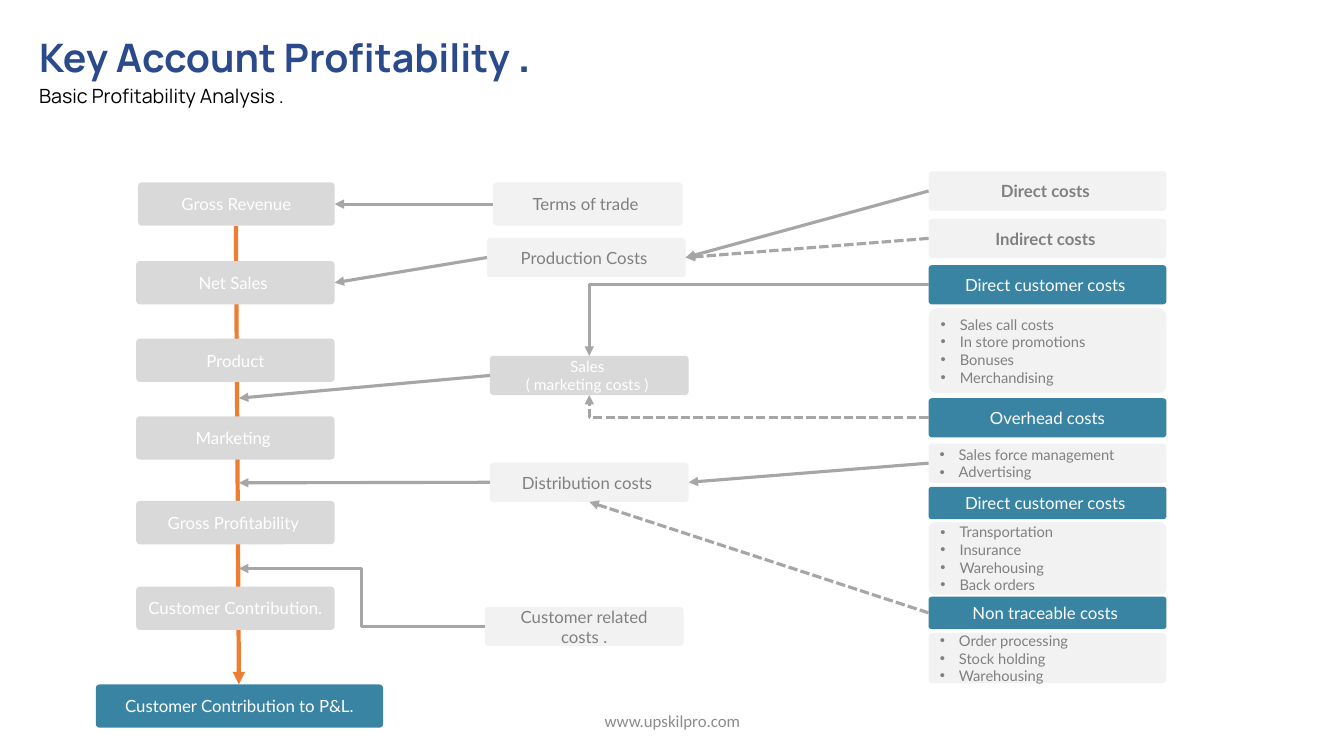
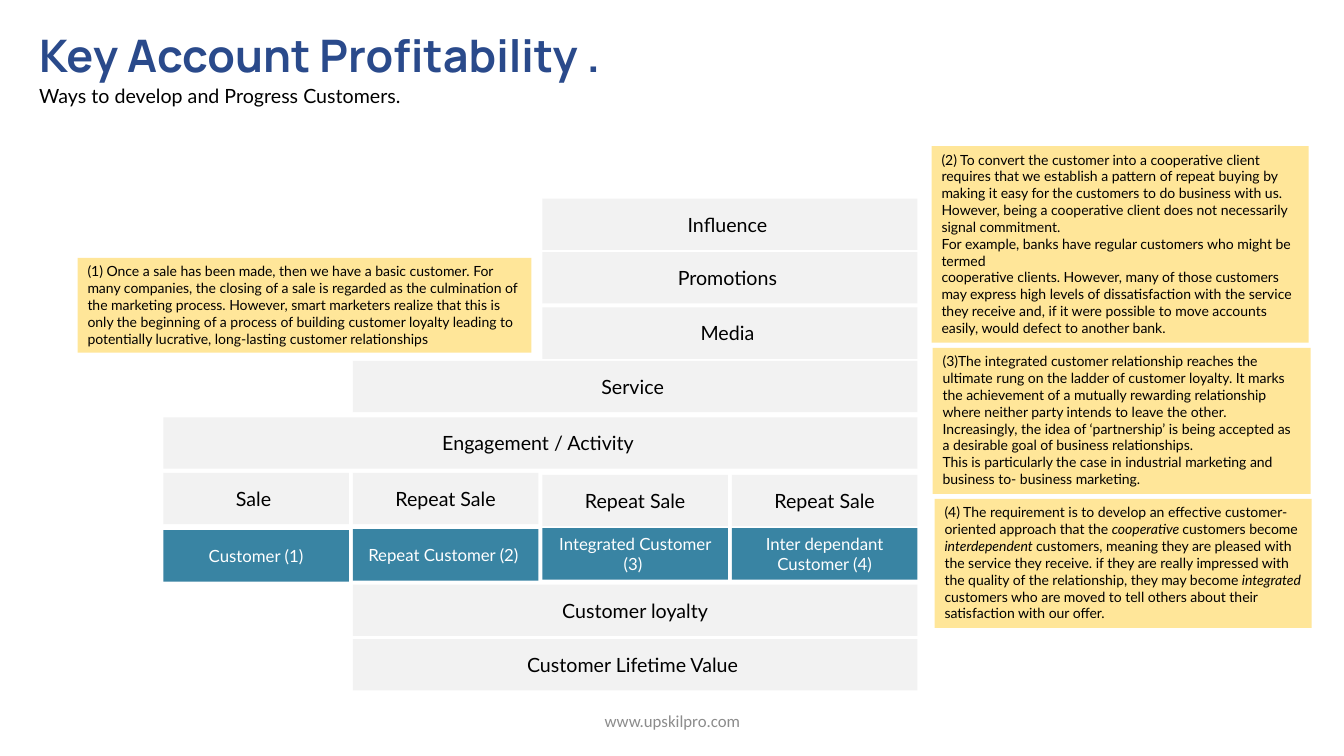
"""Build two slides on key account profitability: a cost flow and a customer ladder."""
from pptx import Presentation, util as u
from pptx.dml.color import RGBColor
from pptx.enum import dml, shapes, text
from pptx.oxml.ns import qn
from lxml import etree

PX = 9144
NAVY = RGBColor(0x2A, 0x4A, 0x8B)
TEAL = RGBColor(0x39, 0x84, 0xA3)
ORANGE = RGBColor(0xED, 0x7D, 0x31)
YELLOW = RGBColor(0xFF, 0xE6, 0x99)
SILVER = RGBColor(0xD9, 0xD9, 0xD9)
PALE = RGBColor(0xF2, 0xF2, 0xF2)
LINE_GRAY = RGBColor(0xA6, 0xA6, 0xA6)
TEXT_GRAY = RGBColor(0x80, 0x80, 0x80)
FOOTER_GRAY = RGBColor(0x8C, 0x8C, 0x8C)
WHITE = RGBColor(0xFF, 0xFF, 0xFF)
BLACK = RGBColor(0, 0, 0)
BODY_FONT, TITLE_FONT, FOOTER_FONT = "Lato", "Manrope", "Calibri"
LEFT, CENTER = text.PP_ALIGN.LEFT, text.PP_ALIGN.CENTER
TOP, MIDDLE = text.MSO_ANCHOR.TOP, text.MSO_ANCHOR.MIDDLE
TITLE = "Key Account Profitability "
FOOTER = "www.upskilpro.com"

STYLES = {
    "stage": dict(fill=SILVER, color=WHITE, size=12),
    "sales": dict(fill=SILVER, color=WHITE, size=11),
    "cost": dict(fill=PALE, color=TEXT_GRAY, size=12),
    "group": dict(fill=PALE, color=TEXT_GRAY, size=12, bold=True),
    "head": dict(fill=TEAL, color=WHITE, size=12),
    "list": dict(fill=PALE, color=TEXT_GRAY, size=10.5, align=LEFT, bullets=True),
    "step": dict(fill=PALE, color=BLACK, size=14),
    "note": dict(fill=YELLOW, color=BLACK, size=10, align=LEFT, anchor=TOP),
}

FLOW_BOXES = {
    "revenue": ("stage", (137, 181, 195, 43), ["Gross Revenue"]),
    "net": ("stage", (135, 259, 197, 43), ["Net Sales "]),
    "product": ("stage", (135, 336, 197, 43), ["Product"]),
    "marketing": ("stage", (135, 413, 197, 43), ["Marketing "]),
    "gross": ("stage", (135, 497, 197, 43), ["Gross Profitability "]),
    "contribution": ("stage", (135, 582, 197, 43), ["Customer Contribution."]),
    "result": ("head", (95, 679, 285, 43), ["Customer Contribution to P&L."]),
    "terms": ("cost", (489, 181, 188, 43), ["Terms of trade "]),
    "production": ("cost", (483, 236, 197, 39), ["Production Costs "]),
    "sales": ("sales", (486, 353, 197, 39), ["Sales ", "( marketing costs ) "]),
    "distribution": ("cost", (486, 459, 197, 39), ["Distribution costs "]),
    "related": ("cost", (481, 602, 197, 39), ["Customer related costs ."]),
}
COST_X, COST_WIDTH = 921, 236
COST_COLUMN = [
    ("direct", "group", 170, 39, ["Direct costs "]),
    ("indirect", "group", 217, 39, ["Indirect costs "]),
    ("customer", "head", 263, 39, ["Direct customer costs "]),
    ("promotion", "list", 306, 84,
     ["Sales call costs", "In store promotions", "Bonuses", "Merchandising"]),
    ("overhead", "head", 395, 39, ["Overhead costs"]),
    ("force", "list", 440, 39, ["Sales force management", "Advertising"]),
    ("delivery", "head", 483, 32, ["Direct customer costs "]),
    ("transport", "list", 518, 72,
     ["Transportation", "Insurance", "Warehousing", "Back orders"]),
    ("untraceable", "head", 592, 32, ["Non traceable costs "]),
    ("orders", "list", 628, 50, ["Order processing", "Stock holding", "Warehousing"]),
]
SPINE_TOP, SPINE_END = (234, 224), (237, 679)
LINKS = [
    ("terms", "revenue", "right", "line", False),
    ("production", "net", "right", "line", False),
    ("sales", "spine", 395, "line", False),
    ("distribution", "spine", 479, "line", False),
    ("related", "spine", 564, "bentConnector3", False),
    ("direct", "production", "right", "line", False),
    ("indirect", "production", "right", "line", True),
    ("customer", "sales", "top", "bentConnector2", False),
    ("overhead", "sales", "bottom", "bentConnector2", True),
    ("force", "distribution", "right", "line", False),
    ("untraceable", "distribution", "bottom", "line", True),
]

GRID_X, CELL_WIDTH, CELL_PITCH, CELL_HEIGHT = 162, 184, 188, 51
LADDER = [
    (197, 2, 3, "step", "Influence "),
    (250, 2, 3, "step", "Promotions "),
    (305, 2, 3, "step", "Media "),
    (358, 1, 3, "step", "Service "),
    (414, 0, 3, "step", "Engagement / Activity "),
    (469, 0, 0, "step", "Sale "),
    (469, 1, 1, "step", "Repeat Sale"),
    (471, 2, 2, "step", "Repeat Sale"),
    (471, 3, 3, "step", "Repeat Sale"),
    (526, 0, 0, "head", "Customer (1)"),
    (525, 1, 1, "head", "Repeat Customer (2) "),
    (524, 2, 2, "head", "Integrated Customer (3) "),
    (524, 3, 3, "head", "Inter dependant Customer (4)"),
    (580, 1, 3, "step", "Customer loyalty"),
    (634, 1, 3, "step", "Customer Lifetime Value "),
]
NOTES = [
    ((77, 256, 450, 94), [
        "(1) Once a sale has been made, then we have a basic customer. For many companies, "
        "the closing of a sale is regarded as the culmination of the marketing process. "
        "However, smart marketers realize that this is only the beginning of a process of "
        "building customer loyalty leading to potentially lucrative, long-lasting customer "
        "relationships"]),
    ((924, 145, 374, 195), [
        "(2) To convert the customer into a cooperative client requires that we establish a "
        "pattern of repeat buying by making it easy for the customers to do business with us. "
        "However, being a cooperative client does not necessarily signal commitment.",
        "For example, banks have regular customers who might be termed",
        "cooperative clients. However, many of those customers may express high levels of "
        "dissatisfaction with the service they receive and, if it were possible to move "
        "accounts easily, would defect to another bank."]),
    ((925, 345, 375, 145), [
        "(3)The integrated customer relationship reaches the ultimate rung on the ladder of "
        "customer loyalty. It marks the achievement of a mutually rewarding relationship",
        "where neither party intends to leave the other. Increasingly, the idea of "
        "‘partnership’ is being accepted as a desirable goal of business relationships.",
        "This is particularly the case in industrial marketing and business to- business "
        "marketing."]),
    ((927, 495, 374, 128), [
        "(4) The requirement is to develop an effective customer-oriented approach that the "
        "*cooperative *customers become *interdependent *customers, meaning they are pleased "
        "with the service they receive. if they are really impressed with the quality of the "
        "relationship, they may become *integrated *customers who are moved to tell others "
        "about their satisfaction with our offer."]),
]


def emu(*lengths):
    """Turn px lengths into EMU."""
    return [round(length * PX) for length in lengths]


def style_run(span, size, color, font=BODY_FONT, bold=False, italic=False):
    """Format one run."""
    span.font.size, span.font.name = u.Pt(size), font
    span.font.bold, span.font.italic = bold, italic
    span.font.color.rgb = color


def add_bullet(para):
    """Give a paragraph a hanging bullet."""
    props = para._p.get_or_add_pPr()
    indent = emu(19)[0]
    props.set("marL", str(indent))
    props.set("indent", str(-indent))
    etree.SubElement(props, qn("a:buFont")).set("typeface", "Arial")
    etree.SubElement(props, qn("a:buChar")).set("char", "•")


def add_box(slide, kind, place, lines, rounded=False):
    """Draw a filled box in a named style; asterisks enclose italics."""
    style = STYLES[kind]
    preset = shapes.MSO_SHAPE.ROUNDED_RECTANGLE if rounded else shapes.MSO_SHAPE.RECTANGLE
    box = slide.shapes.add_shape(preset, *emu(*place))
    if rounded:
        box.adjustments[0] = 0.09
    box.shadow.inherit = False
    box.fill.solid()
    box.fill.fore_color.rgb = style["fill"]
    box.line.fill.background()
    frame = box.text_frame
    frame.word_wrap = True
    frame.vertical_anchor = style.get("anchor", MIDDLE)
    frame.text = "\n".join(lines)
    for para, line in zip(frame.paragraphs, lines):
        para.alignment = style.get("align", CENTER)
        if style.get("bullets"):
            add_bullet(para)
        para.text = ""
        for index, part in enumerate(line.split("*")):
            span = para.add_run()
            span.text = part
            style_run(span, style["size"], style["color"],
                      bold=style.get("bold", False), italic=index % 2 == 1)


def add_arrow(slide, start, end, color, width, preset="line", dashed=False):
    """Draw a straight or bent arrow between two points."""
    line_type = shapes.MSO_CONNECTOR.STRAIGHT if preset == "line" else shapes.MSO_CONNECTOR.ELBOW
    arrow = slide.shapes.add_connector(line_type, *emu(*start, *end))
    arrow.line.color.rgb = color
    arrow.line.width = u.Pt(width)
    if dashed:
        arrow.line.dash_style = dml.MSO_LINE.SQUARE_DOT
    props = arrow._element.spPr
    props.find(qn("a:prstGeom")).set("prst", preset)
    etree.SubElement(props.find(qn("a:ln")), qn("a:tailEnd")).set("type", "triangle")
    etree.SubElement(props, qn("a:effectLst"))


def anchor_point(place, side):
    """Return the middle of one side of a box."""
    left, top, width, height = place
    return {
        "left": (left, top + height / 2),
        "right": (left + width, top + height / 2),
        "top": (left + width / 2, top),
        "bottom": (left + width / 2, top + height),
    }[side]


def add_page(deck, title_size, subtitle, subtitle_font):
    """Add a blank slide with the shared title and footer."""
    slide = deck.slides.add_slide(deck.slide_layouts[6])
    frame = slide.shapes.add_textbox(*emu(29, 23, 701, 88)).text_frame
    frame.word_wrap = True
    frame.text = TITLE + "\n" + subtitle
    heading, caption = frame.paragraphs
    style_run(heading.runs[0], title_size, NAVY, TITLE_FONT, bold=True)
    stop = heading.add_run()
    stop.text = "."
    style_run(stop, 32, NAVY, TITLE_FONT, bold=True)
    caption.line_spacing = 1.07
    caption.space_after = u.Pt(8)
    style_run(caption.runs[0], 14, BLACK, subtitle_font)

    frame = slide.shapes.add_textbox(*emu(442, 695, 450, 40)).text_frame
    frame.word_wrap = True
    frame.vertical_anchor = MIDDLE
    frame.text = FOOTER
    frame.paragraphs[0].alignment = CENTER
    style_run(frame.paragraphs[0].runs[0], 12, FOOTER_GRAY, FOOTER_FONT)
    return slide


def build_flow(deck):
    """Build the profitability flow."""
    slide = add_page(deck, 28, "Basic Profitability Analysis .", TITLE_FONT)
    boxes = dict(FLOW_BOXES)
    for name, kind, top, height, lines in COST_COLUMN:
        boxes[name] = (kind, (COST_X, top, COST_WIDTH, height), lines)
    add_arrow(slide, SPINE_TOP, SPINE_END, ORANGE, 3)
    for kind, place, lines in boxes.values():
        add_box(slide, kind, place, lines, rounded=True)
    for source, target, side, preset, dashed in LINKS:
        start = anchor_point(boxes[source][1], "left")
        if target == "spine":
            end = (SPINE_END[0], side)
        else:
            end = anchor_point(boxes[target][1], side)
        add_arrow(slide, start, end, LINE_GRAY, 2.25, preset, dashed)


def build_ladder(deck):
    """Build the customer ladder with its notes."""
    slide = add_page(deck, 32, "Ways to develop and Progress Customers.", BODY_FONT)
    for place, lines in NOTES:
        add_box(slide, "note", place, lines)
    for top, first, last, kind, label in LADDER:
        left = GRID_X + first * CELL_PITCH
        width = CELL_WIDTH + (last - first) * CELL_PITCH
        add_box(slide, kind, (left, top, width, CELL_HEIGHT), [label])


def main():
    """Build and save the deck."""
    deck = Presentation()
    deck.slide_width, deck.slide_height = emu(1333, 750)
    build_flow(deck)
    build_ladder(deck)
    deck.save("out.pptx")


if __name__ == "__main__":
    main()
